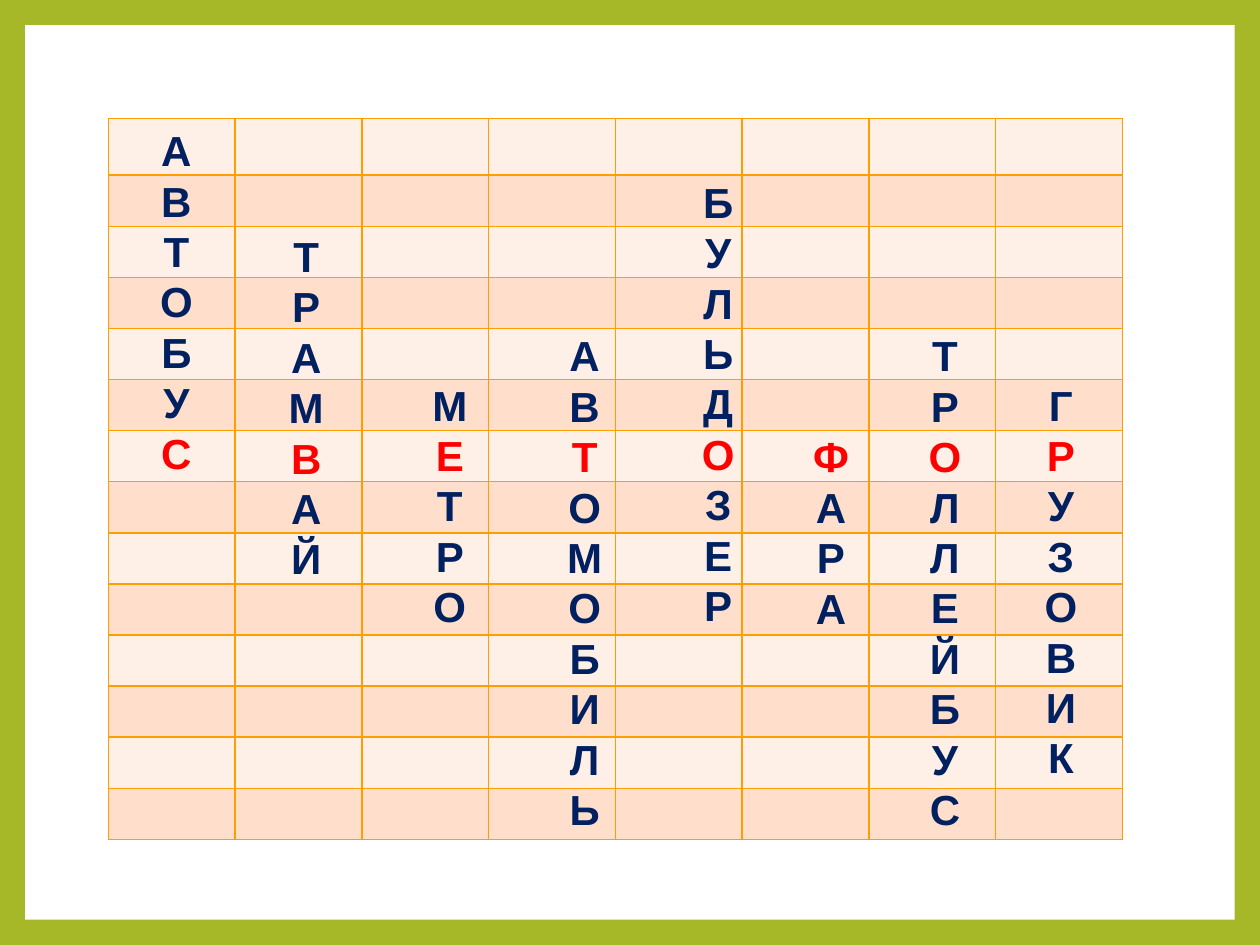
from dataclasses import dataclass

from lxml import etree
from pptx import Presentation
from pptx.dml.color import RGBColor
from pptx.enum import shapes, text
from pptx.oxml import ns
from pptx.util import Inches, Pt


@dataclass(frozen=True)
class Theme:
    frame: str = "A6B727"
    paper: str = "FFFFFF"
    bands: tuple = ("FFF0E7", "FFDFCC")
    grid: str = "FE9E00"
    letter: str = "002060"
    key_letter: str = "FF0000"
    outline: str = "5A5545"
    font: str = "Arial"
    letter_size: int = 24
    line_width: int = 1


THEME = Theme()
ROWS, COLUMNS = 14, 8
TABLE_LEFT, TABLE_TOP, TABLE_WIDTH, TABLE_HEIGHT = 0.86, 0.94, 8.05, 5.72
FIRST_ROW = 0.45

# Word, index of its key letter, then left, top, width and height of its box
WORDS = [
    ("АВТОБУС", 6, 1.17, 0.94, 0.46, 2.93),
    ("ТРАМВАЙ", 4, 2.19, 1.78, 0.48, 2.93),
    ("МЕТРО", 1, 3.33, 2.96, 0.48, 2.12),
    ("АВТОМОБИЛЬ", 2, 4.4, 2.57, 0.48, 4.14),
    ("БУЛЬДОЗЕР", 5, 5.47, 1.35, 0.46, 3.74),
    ("ФАРА", 0, 6.35, 3.37, 0.49, 1.72),
    ("ТРОЛЛЕЙБУС", 2, 7.27, 2.57, 0.46, 4.14),
    ("ГРУЗОВИК", 1, 8.19, 2.96, 0.46, 3.33),
]


def paint(fill, color):
    fill.solid()
    fill.fore_color.rgb = RGBColor.from_string(color)


def line_element(tag, color):
    line = etree.Element(ns.qn(tag), w=str(Pt(THEME.line_width)))
    solid = etree.SubElement(line, ns.qn("a:solidFill"))
    etree.SubElement(solid, ns.qn("a:srgbClr"), val=color)
    return line


def add_frame(page):
    """Colour the page edge and lay the white sheet inside it."""
    paint(page.background.fill, THEME.frame)
    sheet = page.shapes.add_shape(
        shapes.MSO_SHAPE.RECTANGLE, Inches(0.2), Inches(0.2), Inches(9.6), Inches(7.1))
    sheet.shadow.inherit = False
    paint(sheet.fill, THEME.paper)
    sheet.line.fill.background()


def add_grid(page):
    table = page.shapes.add_table(
        ROWS, COLUMNS, Inches(TABLE_LEFT), Inches(TABLE_TOP),
        Inches(TABLE_WIDTH), Inches(TABLE_HEIGHT)).table
    table.first_row = table.horz_banding = False
    for column in table.columns:
        column.width = Inches(TABLE_WIDTH / COLUMNS)
    for index, row in enumerate(table.rows):
        other_row = (TABLE_HEIGHT - FIRST_ROW) / (ROWS - 1)
        row.height = Inches(other_row if index else FIRST_ROW)
        for cell in row.cells:
            properties = cell._tc.get_or_add_tcPr()
            for side in ("a:lnL", "a:lnR", "a:lnT", "a:lnB"):
                properties.append(line_element(side, THEME.grid))
            paint(cell.fill, THEME.bands[index % 2])


def add_word(page, word, key, left, top, width, height):
    """Write a word downwards, one letter a paragraph, with its key letter in red."""
    box = page.shapes.add_textbox(
        Inches(left), Inches(top), Inches(width), Inches(height))
    frame = box.text_frame
    frame.word_wrap = False
    frame.auto_size = text.MSO_AUTO_SIZE.SHAPE_TO_FIT_TEXT
    for index, letter in enumerate(word):
        para = frame.add_paragraph() if index else frame.paragraphs[0]
        para.alignment = text.PP_ALIGN.CENTER
        span = para.add_run()
        span.text = letter
        font = span.font
        font.name = THEME.font
        font.size = Pt(THEME.letter_size)
        font.bold = True
        color = THEME.key_letter if index == key else THEME.letter
        font.color.rgb = RGBColor.from_string(color)
        span._r.get_or_add_rPr().insert(0, line_element("a:ln", THEME.outline))


def main():
    deck = Presentation()
    deck.slide_width, deck.slide_height = Inches(10), Inches(7.5)
    blank_layout = deck.slide_layouts[6]
    page = deck.slides.add_slide(blank_layout)
    add_frame(page)
    add_grid(page)
    for entry in WORDS:
        add_word(page, *entry)
    deck.save("out.pptx")


if __name__ == "__main__":
    main()
